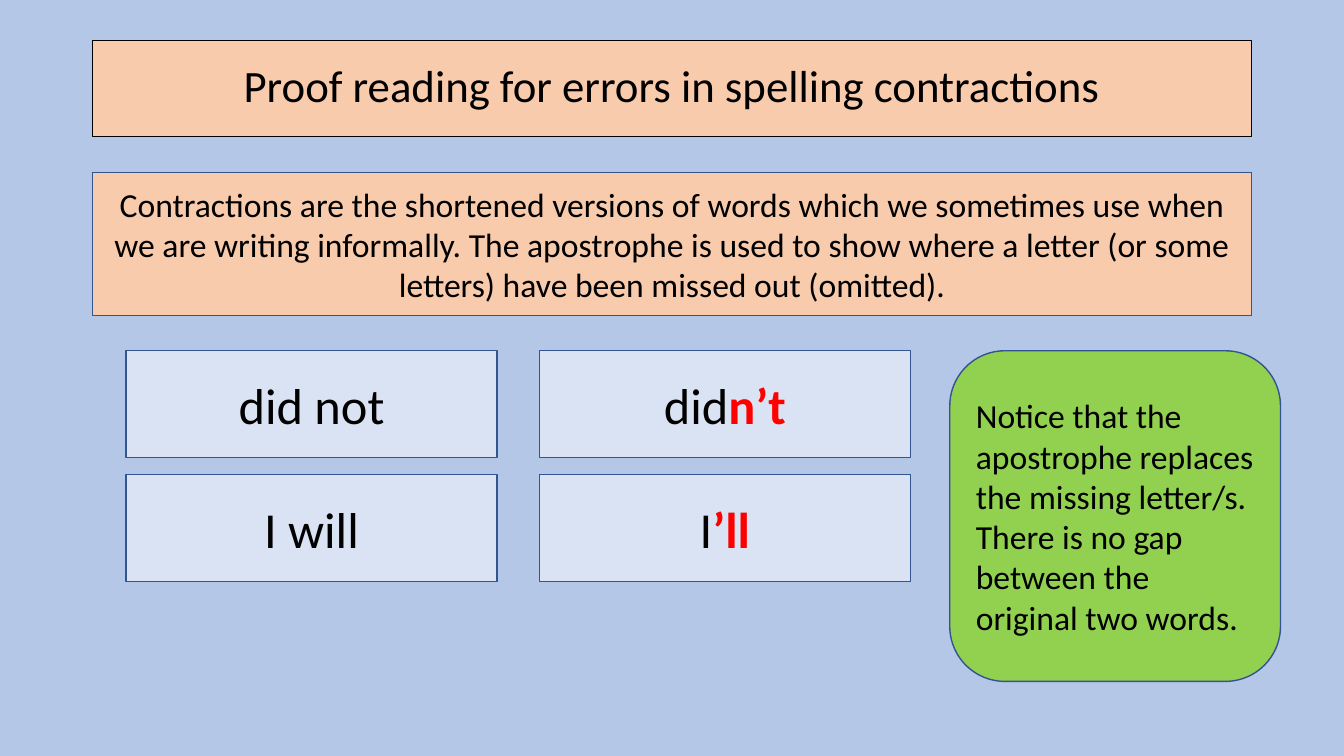
"""Build the slide on proof reading for errors in spelling contractions."""
from pptx import Presentation
from pptx.dml.color import RGBColor
from pptx.enum.shapes import MSO_SHAPE
from pptx.enum.text import MSO_ANCHOR, PP_ALIGN
from pptx.util import Inches, Pt

RECTANGLE, ROUNDED = MSO_SHAPE.RECTANGLE, MSO_SHAPE.ROUNDED_RECTANGLE
CENTER, LEFT = PP_ALIGN.CENTER, PP_ALIGN.LEFT
MIDDLE = MSO_ANCHOR.MIDDLE

TITLE = "Proof reading for errors in spelling contractions"
EXPLANATION = (
    "Contractions are the shortened versions of words which we sometimes use when "
    "we are writing informally. The apostrophe is used to show where a letter "
    "(or some letters) have been missed out (omitted)."
)
EXAMPLES = [
    [("did not", ""), ("did", "n’t")],
    [("I will", ""), ("I", "’ll")],
]
NOTICE = (
    "Notice that the apostrophe replaces the missing letter/s. "
    "There is no gap between the original two words."
)

COLORS = {
    "background": "B4C7E7",
    "banner": "F8CBAD",
    "example": "DAE3F3",
    "notice": "92D050",
    "border": "325491",
    "text": "000000",
    "accent": "FF0000",
}
FONT = "Calibri"
SLIDE_WIDTH, SLIDE_HEIGHT = 13.33, 7.5
BANNER_WIDTH = 11.5
BANNER_LEFT = (SLIDE_WIDTH - BANNER_WIDTH) / 2
GRID_LEFT, GRID_TOP = 1.25, 3.48
CELL_WIDTH, CELL_HEIGHT = 3.68, 1.06
COLUMN_STEP, ROW_STEP = 4.1, 1.23
NOTICE_LEFT, NOTICE_SIDE = 9.42, 3.28


def color(name):
    return RGBColor.from_string(COLORS[name])


def add_box(page, area, text, fill, size, accent="", outline=RECTANGLE,
            border="border", weight=1, align=CENTER, spacing=None):
    box = page.shapes.add_shape(outline, *map(Inches, area))
    box.shadow.inherit = False
    box.fill.solid()
    box.fill.fore_color.rgb = color(fill)
    box.line.color.rgb = color(border)
    box.line.width = Pt(weight)
    frame = box.text_frame
    frame.word_wrap = True
    frame.vertical_anchor = MIDDLE
    para = frame.paragraphs[0]
    for name, value in {"alignment": align, "line_spacing": spacing}.items():
        setattr(para, name, value)
    for words, shade, bold in ((text, "text", False), (accent, "accent", True)):
        if words:
            span = para.add_run()
            span.text = words
            for name, value in {"name": FONT, "size": Pt(size), "bold": bold}.items():
                setattr(span.font, name, value)
            span.font.color.rgb = color(shade)


def main():
    deck = Presentation()
    deck.slide_width, deck.slide_height = Inches(SLIDE_WIDTH), Inches(SLIDE_HEIGHT)
    page = deck.slides.add_slide(deck.slide_layouts[6])
    page.background.fill.solid()
    page.background.fill.fore_color.rgb = color("background")

    add_box(page, (BANNER_LEFT, 0.4, BANNER_WIDTH, 0.95), TITLE, "banner", 32,
            border="text", weight=0.75, spacing=0.9)
    add_box(page, (BANNER_LEFT, 1.71, BANNER_WIDTH, 1.42), EXPLANATION, "banner", 24)
    for row, pair in enumerate(EXAMPLES):
        for column, (plain, accent) in enumerate(pair):
            area = (GRID_LEFT + column * COLUMN_STEP, GRID_TOP + row * ROW_STEP,
                    CELL_WIDTH, CELL_HEIGHT)
            add_box(page, area, plain, "example", 36, accent)
    add_box(page, (NOTICE_LEFT, GRID_TOP, NOTICE_SIDE, NOTICE_SIDE), NOTICE,
            "notice", 24, outline=ROUNDED, align=LEFT)
    deck.save("out.pptx")


if __name__ == "__main__":
    main()
